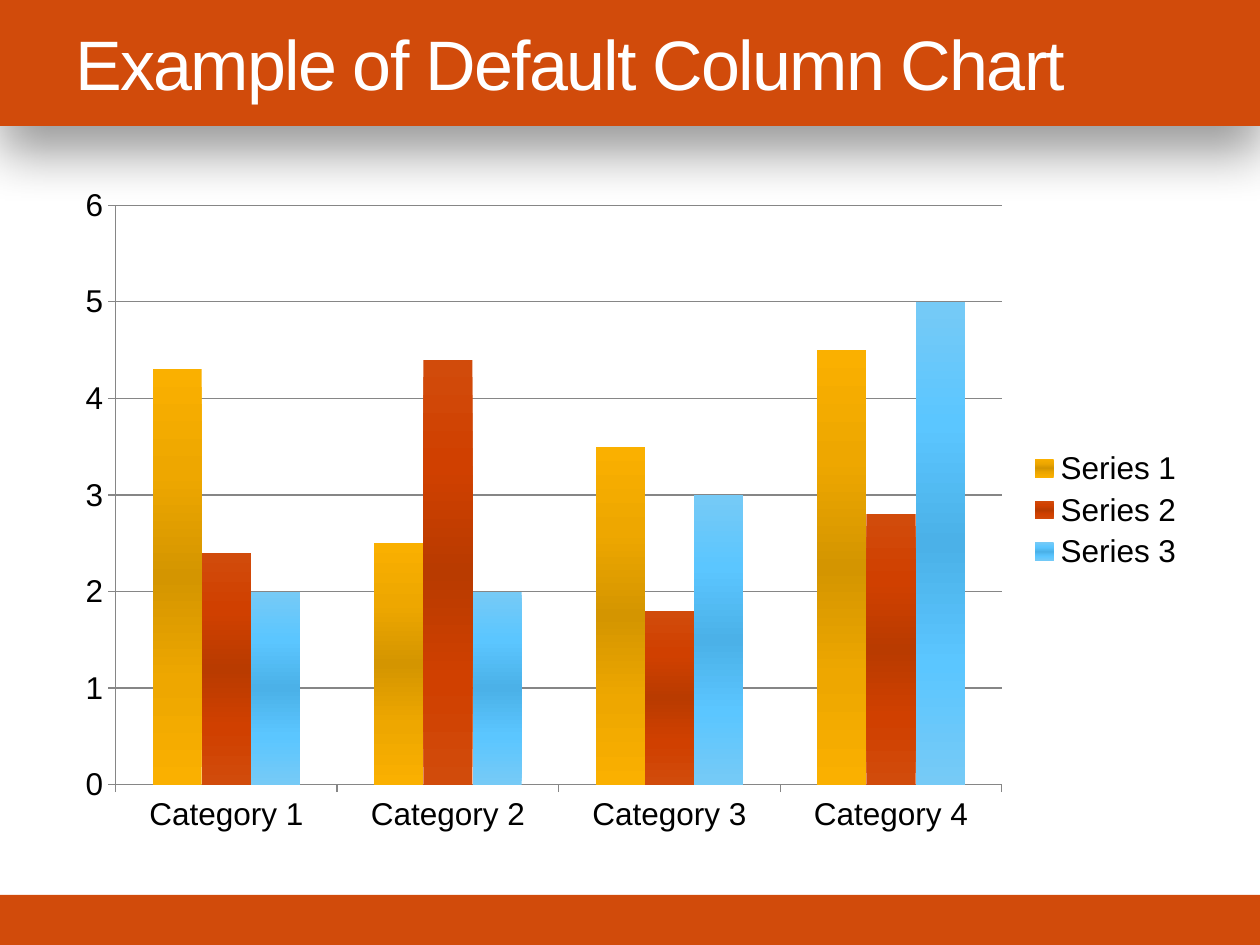
"""Build a slide with a titled header band and a clustered column chart."""
from lxml import etree
from pptx import Presentation
from pptx import util as u
from pptx.chart.data import CategoryChartData
from pptx.dml.color import RGBColor
from pptx.enum import chart as ch, shapes, text
from pptx.oxml import parse_xml
from pptx.oxml.ns import nsdecls, qn

FONT = "Arial"
COLORS = {"band": "D14B0B", "title": "FFFFFF", "text": "000000", "line": "868686"}
CATEGORIES = ["Category 1", "Category 2", "Category 3", "Category 4"]
SERIES = [
    ("Series 1", (4.3, 2.5, 3.5, 4.5), ("FAB000", "EEA700", "D49500")),
    ("Series 2", (2.4, 4.4, 1.8, 2.8), ("D14B0B", "D04000", "B93B00")),
    ("Series 3", (2, 2, 3, 5), ("76CAF6", "5BC6FF", "4BB1E8")),
]


def px(n):
    return u.Emu(round(n * 914400 / 126))


def box(*lengths):
    return [px(n) for n in lengths]


def rgb(name):
    return RGBColor.from_string(COLORS[name])


def add_band(s, top, height):
    sp = s.shapes.add_shape(shapes.MSO_SHAPE.RECTANGLE, *box(0, top, 1260, height))
    sp.shadow.inherit = False
    sp.fill.solid()
    sp.fill.fore_color.rgb = rgb("band")
    sp.line.fill.background()
    return sp


def add_shadow(sp):
    effects = sp._element.spPr.find(qn("a:effectLst"))
    effects.append(parse_xml(
        f'<a:outerShdw {nsdecls("a")} blurRad="{u.Pt(30)}" dist="{u.Pt(15)}" '
        'dir="5400000" algn="ctr" rotWithShape="0">'
        f'<a:srgbClr val="{COLORS["text"]}"><a:alpha val="40000"/></a:srgbClr>'
        '</a:outerShdw>'))


def add_title(s, words):
    tf = s.shapes.add_textbox(*box(63, 0, 1134, 126)).text_frame
    tf.word_wrap = True
    tf.vertical_anchor = text.MSO_ANCHOR.MIDDLE
    tf.text = words
    r = tf.paragraphs[0].runs[0]
    r.font.name, r.font.size = FONT, u.Pt(40)
    r.font.color.rgb = rgb("title")
    r._r.get_or_add_rPr().set("spc", "-100")


def shade_columns(series, shades):
    edge, side, middle = shades
    series.format.fill.gradient()
    series.format.fill.gradient_angle = 90
    stops = series._element.find(".//" + qn("a:gsLst"))
    for stop in list(stops):
        stops.remove(stop)
    for i, shade in enumerate((edge, side, middle, side, edge)):
        stop = etree.SubElement(stops, qn("a:gs"), pos=str(i * 25000))
        etree.SubElement(stop, qn("a:srgbClr"), val=shade)


def style_axis(axis):
    axis.major_tick_mark = ch.XL_TICK_MARK.OUTSIDE
    axis.minor_tick_mark = ch.XL_TICK_MARK.NONE
    axis.format.line.color.rgb = rgb("line")
    axis.format.line.width = u.Pt(0.75)


def add_column_chart(s):
    data = CategoryChartData()
    data.categories = CATEGORIES
    for name, values, _ in SERIES:
        data.add_series(name, values)
    chart = s.shapes.add_chart(ch.XL_CHART_TYPE.COLUMN_CLUSTERED,
                               *box(63, 174, 1134, 672), data).chart
    chart.has_title = False
    chart.font.name, chart.font.size = FONT, u.Pt(18)
    chart.font.color.rgb = rgb("text")
    chart.has_legend = True
    chart.legend.position = ch.XL_LEGEND_POSITION.RIGHT
    chart.legend.include_in_layout = False
    for axis in (chart.category_axis, chart.value_axis):
        style_axis(axis)
    axis = chart.value_axis
    axis.minimum_scale, axis.maximum_scale, axis.major_unit = 0, 6, 1
    axis.has_major_gridlines = True
    axis.major_gridlines.format.line.color.rgb = rgb("line")
    axis.major_gridlines.format.line.width = u.Pt(0.75)
    plot = chart.plots[0]
    plot.gap_width, plot.overlap, plot.vary_by_categories = 150, 0, False
    for series, (_, _, shades) in zip(plot.series, SERIES):
        shade_columns(series, shades)


def main():
    prs = Presentation()
    prs.slide_width, prs.slide_height = box(1260, 945)
    s = prs.slides.add_slide(prs.slide_layouts[6])
    add_band(s, 895, 50)
    add_shadow(add_band(s, 0, 126))
    add_title(s, "Example of Default Column Chart")
    add_column_chart(s)
    prs.save("out.pptx")


if __name__ == "__main__":
    main()
